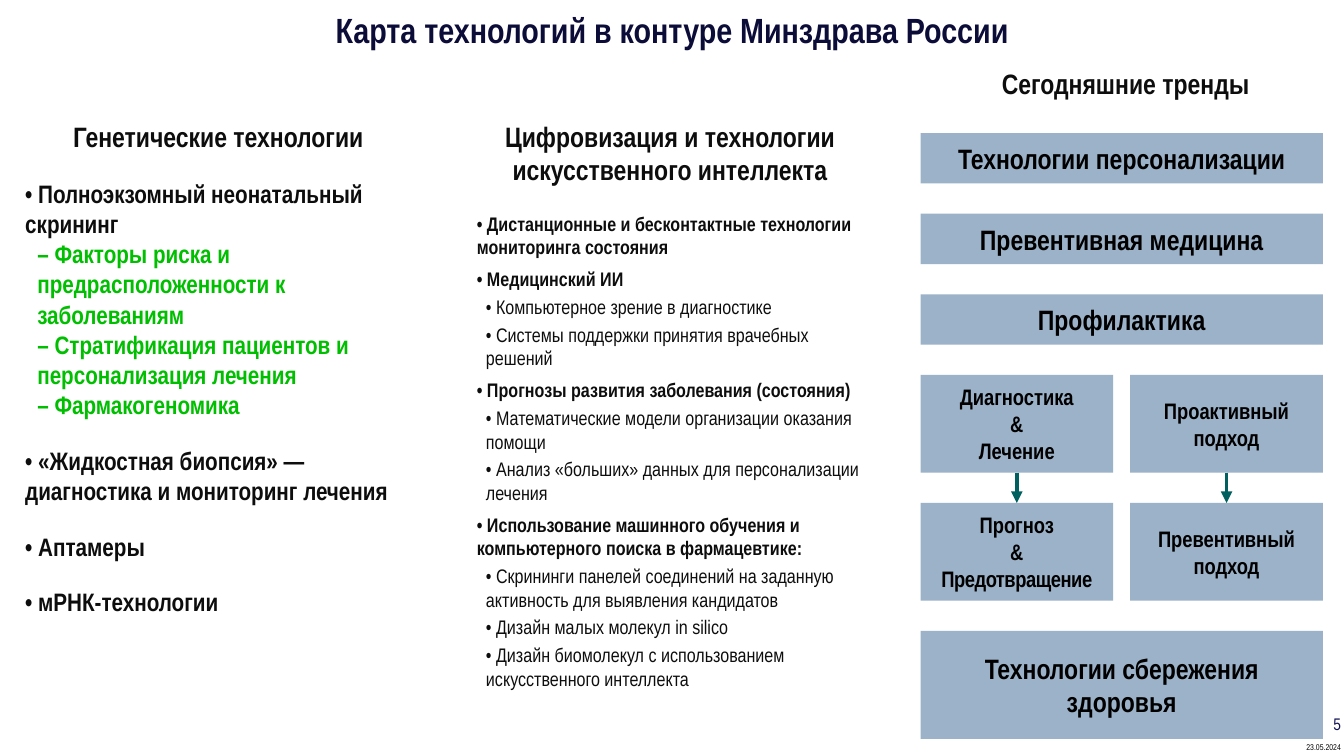
from dataclasses import dataclass

from lxml.etree import SubElement
from pptx import Presentation
from pptx.dml.color import RGBColor
from pptx.enum.shapes import MSO_CONNECTOR, MSO_SHAPE
from pptx.enum.text import MSO_ANCHOR, PP_ALIGN
from pptx.oxml.ns import qn
from pptx.util import Pt


@dataclass(frozen=True)
class Theme:
    font: str = "Arial Narrow"
    title: str = "0C0C38"
    body: str = "0D0D0D"
    accent: str = "00BF00"
    box: str = "9BB2C8"
    box_text: str = "000000"
    arrow: str = "006060"
    page: str = "131354"
    sz_title: int = 25
    sz_head: int = 20
    sz_main: int = 18
    sz_small_box: int = 16
    sz_detail: int = 14
    sz_page: int = 12
    sz_date: int = 6


T = Theme()
COL_W, HALF_W, GAP = 399, 191, 30
STACK_X, STACK_Y = 913, 132
HEAD = dict(size=T.sz_head, align=PP_ALIGN.CENTER, after=18)

GENETICS = [
    ("• Полноэкзомный неонатальный скрининг", {}),
    ("– Факторы риска и предрасположенности к заболеваниям", dict(indent=12, color=T.accent)),
    ("– Стратификация пациентов и персонализация лечения", dict(indent=12, color=T.accent)),
    ("– Фармакогеномика", dict(indent=12, color=T.accent, after=18)),
    ("• «Жидкостная биопсия» — диагностика и мониторинг лечения", dict(after=18)),
    ("• Аптамеры", dict(after=18)),
    ("• мРНК-технологии", dict(after=18)),
]

DETAIL = dict(indent=9, bold=False, after=3)
LAST_DETAIL = DETAIL | dict(after=6)
DIGITAL = [
    ("• Дистанционные и бесконтактные технологии мониторинга состояния", dict(after=6)),
    ("• Медицинский ИИ", dict(after=3)),
    ("• Компьютерное зрение в диагностике", DETAIL),
    ("• Системы поддержки принятия врачебных решений", LAST_DETAIL),
    ("• Прогнозы развития заболевания (состояния)", dict(after=3)),
    ("• Математические модели организации оказания помощи", DETAIL),
    ("• Анализ «больших» данных для персонализации лечения", LAST_DETAIL),
    ("• Использование машинного обучения и компьютерного поиска в фармацевтике:", dict(after=3)),
    ("• Скрининги панелей соединений на заданную активность для выявления кандидатов", DETAIL),
    ("• Дизайн малых молекул in silico", DETAIL),
    ("• Дизайн биомолекул с использованием искусственного интеллекта", DETAIL),
]


def px(n):
    """Convert px, 100 to the inch, into EMU."""
    return n * 9144


def rgb(value):
    return RGBColor.from_string(value)


def add_text(tf, text, size=T.sz_main, color=T.body, bold=True, align=PP_ALIGN.LEFT,
             after=0, indent=0, last_spacing=0):
    """Append a paragraph; last_spacing is the tracking of its last line."""
    p = tf.paragraphs[0]
    if p.runs:
        p = tf.add_paragraph()
    p.alignment = align
    p.space_after = Pt(after)
    if indent:
        p_pr = p._p.get_or_add_pPr()
        p_pr.set("marL", str(px(indent)))
        p_pr.set("indent", "0")
    lines = text.split("\n")
    for i, line in enumerate(lines):
        if i:
            p.add_line_break()
        r = p.add_run()
        r.text = line
        r.font.name, r.font.size, r.font.bold = T.font, Pt(size), bold
        r.font.color.rgb = rgb(color)
    if last_spacing:
        r.font._element.set("spc", str(last_spacing))
    # Line breaks take the size of the text around them
    for br in p._p.findall(qn("a:br")):
        SubElement(br, qn("a:rPr")).set("sz", str(size * 100))


def set_frame(tf, inset=8, wrap=True, anchor=MSO_ANCHOR.MIDDLE):
    tf.word_wrap = wrap
    tf.vertical_anchor = anchor
    tf.margin_left = tf.margin_right = tf.margin_top = tf.margin_bottom = px(inset)
    return tf


def add_label(s, x, y, w, h, inset=8, wrap=True, anchor=MSO_ANCHOR.MIDDLE):
    sp = s.shapes.add_textbox(px(x), px(y), px(w), px(h))
    return set_frame(sp.text_frame, inset, wrap, anchor)


def add_column(s, x, h, heading, items, size):
    tf = add_label(s, x, 108, COL_W, h)
    add_text(tf, heading, **HEAD)
    for text, style in items:
        add_text(tf, text, size=size, **style)


def add_box(s, x, y, w, h, text, size=T.sz_head, inset=8, last_spacing=0):
    sp = s.shapes.add_shape(MSO_SHAPE.RECTANGLE, px(x), px(y), px(w), px(h))
    sp.shadow.inherit = False
    sp.fill.solid()
    sp.fill.fore_color.rgb = rgb(T.box)
    sp.line.fill.background()
    add_text(set_frame(sp.text_frame, inset), text, size=size, color=T.box_text,
             align=PP_ALIGN.CENTER, last_spacing=last_spacing)
    return sp


def add_arrow_down(s, upper, lower):
    cx = s.shapes.add_connector(MSO_CONNECTOR.STRAIGHT, 0, 0, 0, 0)
    cx.begin_connect(upper, 2)
    cx.end_connect(lower, 0)
    cx.line.color.rgb = rgb(T.arrow)
    cx.line.width = Pt(2.75)
    SubElement(cx.line._get_or_add_ln(), qn("a:tailEnd")).set("type", "triangle")
    SubElement(cx._element.spPr, qn("a:effectLst"))


def add_trends(s):
    add_text(add_label(s, 917, 58, COL_W, 50), "Сегодняшние тренды", **HEAD)
    y = STACK_Y
    for text in ("Технологии персонализации", "Превентивная медицина", "Профилактика"):
        add_box(s, STACK_X, y, COL_W, 50, text)
        y += 50 + GAP

    half_h = 97
    pairs = [
        ("Диагностика\n&\nЛечение", "Прогноз\n&\nПредотвращение", -30),
        ("Проактивный подход", "Превентивный подход", 0),
    ]
    for i, (today, goal, spacing) in enumerate(pairs):
        x = STACK_X + i * (COL_W - HALF_W)
        upper = add_box(s, x, y, HALF_W, half_h, today, size=T.sz_small_box)
        lower = add_box(s, x, y + half_h + GAP, HALF_W, half_h, goal,
                        size=T.sz_small_box, last_spacing=spacing)
        add_arrow_down(s, upper, lower)
    y += 2 * (half_h + GAP)
    add_box(s, STACK_X, y, COL_W, 107, "Технологии сбережения здоровья", inset=20)


def main():
    prs = Presentation()
    prs.slide_width, prs.slide_height = px(1333), px(750)
    s = prs.slides.add_slide(prs.slide_layouts[6])

    add_text(add_label(s, 17, 0, 1299, 58), "Карта технологий в контуре Минздрава России",
             size=T.sz_title, color=T.title, align=PP_ALIGN.CENTER)
    add_column(s, 17, 514, "Генетические технологии", GENETICS, T.sz_main)
    add_column(s, 465, 587, "Цифровизация и технологии искусственного интеллекта",
               DIGITAL, T.sz_detail)
    add_trends(s)

    add_text(add_label(s, 1291, 706, 43, 24, inset=4), "5", size=T.sz_page,
             color=T.page, bold=False, align=PP_ALIGN.RIGHT)
    add_text(add_label(s, 1291, 732, 43, 18, inset=4, wrap=False, anchor=MSO_ANCHOR.TOP),
             "23.05.2024", size=T.sz_date, color=T.box_text, bold=False,
             align=PP_ALIGN.RIGHT)
    prs.save("out.pptx")


if __name__ == "__main__":
    main()
